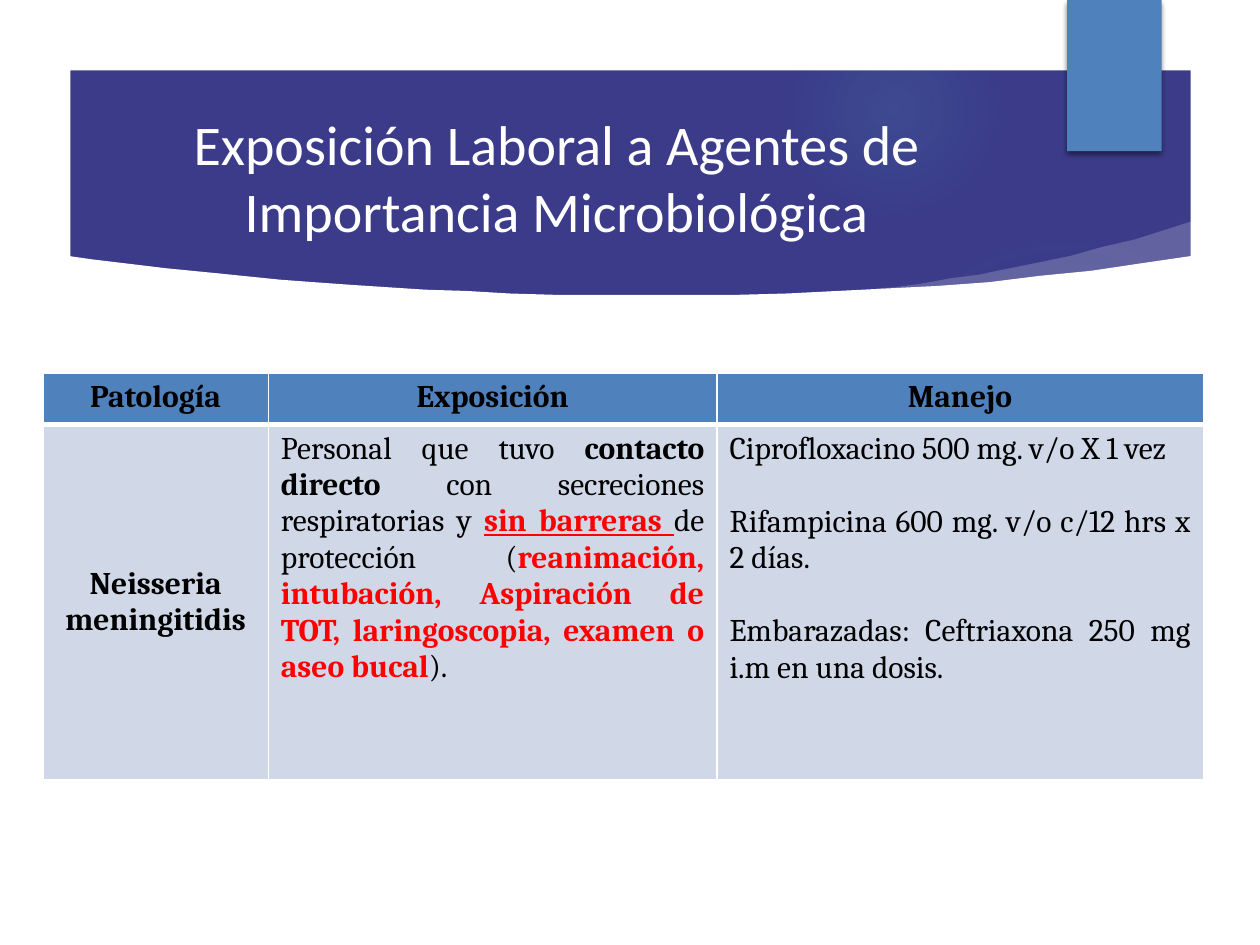
from lxml.etree import SubElement
from pptx import Presentation
from pptx.dml.color import RGBColor
from pptx.enum.shapes import MSO_SHAPE
from pptx.enum.text import MSO_ANCHOR, PP_ALIGN
from pptx.oxml import parse_xml
from pptx.oxml.ns import nsdecls, qn
from pptx.util import Inches, Pt

COLORS = {
    "banner": "3B3B89", "glow": "4BACC6", "blue": "4F81BD", "row": "D0D8E8",
    "white": "FFFFFF", "black": "000000", "red": "FF0000",
}
RGB = {name: RGBColor.from_string(value) for name, value in COLORS.items()}


def add_outline(page, contours, color):
    """Add a filled shape made of closed contours, given in inches."""
    builder = None
    for contour in contours:
        points = [(Inches(x), Inches(y)) for x, y in contour]
        if builder is None:
            builder = page.shapes.build_freeform(*points[0], scale=1.0)
        else:
            builder.move_to(*points[0])
        builder.add_line_segments(points[1:], close=True)
    shape = builder.convert_to_shape()
    shape.shadow.inherit = False
    shape.fill.solid()
    shape.fill.fore_color.rgb = RGB[color]
    shape.line.fill.background()
    return shape


def set_borders(cell, bottom_width):
    """Draw white cell borders, 1 pt wide except at the bottom."""
    properties = cell._tc.get_or_add_tcPr()
    widths = {"lnL": 1, "lnR": 1, "lnT": 1, "lnB": bottom_width}
    for position, (tag, width) in enumerate(widths.items()):
        properties.insert(position, parse_xml(
            f'<a:{tag} {nsdecls("a")} w="{Pt(width)}"><a:solidFill>'
            f'<a:srgbClr val="{COLORS["white"]}"/></a:solidFill></a:{tag}>'))


deck = Presentation()
deck.slide_width, deck.slide_height = Inches(10), Inches(7.5)
page = deck.slides.add_slide(deck.slide_layouts[6])
page.background.fill.solid()
page.background.fill.fore_color.rgb = RGB["banner"]

# Soft glows: left, top, diameter, (position, opacity) stops in percent
glows = [
    (6.89, 1.83, 3.08, [(0, 7), (36, 6), (69, 0)]),
    (6.22, 0, 1.75, [(0, 14), (36, 7), (73, 0)]),
]
for left, top, size, stops in glows:
    glow = page.shapes.add_shape(MSO_SHAPE.OVAL, Inches(left), Inches(top),
                                 Inches(size), Inches(size))
    glow.shadow.inherit = False
    glow.line.fill.background()
    stop_xml = "".join(
        f'<a:gs pos="{position * 1000}"><a:srgbClr val="{COLORS["glow"]}">'
        f'<a:alpha val="{opacity * 1000}"/></a:srgbClr></a:gs>'
        for position, opacity in stops)
    glow._element.spPr.insert(2, parse_xml(
        f'<a:gradFill {nsdecls("a")}><a:gsLst>{stop_xml}</a:gsLst>'
        '<a:path path="circle"><a:fillToRect l="50000" t="50000" r="50000" b="50000"/>'
        '</a:path></a:gradFill>'))

swoosh = add_outline(page, [[
    (6.99, 2.34), (7.5, 2.33), (8.2, 2.27), (8.9, 2.18), (9.56, 2.08), (9.51, 1.74),
    (9.26, 1.82), (9.01, 1.9), (8.75, 1.96), (8.5, 2.03), (8.26, 2.08), (8.01, 2.13),
    (7.77, 2.18), (7.54, 2.21), (7.32, 2.25), (7.1, 2.28), (6.96, 2.29),
]], "white")
swoosh_color = swoosh._element.spPr.find(qn("a:solidFill"))[0]
SubElement(swoosh_color, qn("a:alpha"), val="20000")

# White areas leave the banner with its curved lower edge
add_outline(page, [[
    (0.53, 2.03), (0.53, 6.99), (9.47, 6.99), (9.47, 2.03), (9.06, 2.09), (8.66, 2.15),
    (8.25, 2.19), (7.85, 2.24), (7.44, 2.27), (7.04, 2.29), (6.64, 2.31), (6.25, 2.33),
    (5.87, 2.34), (5.48, 2.34), (4.74, 2.34), (4.39, 2.34), (4.04, 2.33), (3.71, 2.31),
    (3.38, 2.3), (3.07, 2.28), (2.77, 2.26), (2.49, 2.24), (2.22, 2.22), (1.73, 2.17),
    (1.32, 2.13), (0.99, 2.09), (0.74, 2.06),
]], "white")
add_outline(page, [
    [(0, 0), (0, 7.5), (10, 7.5), (10, 0)],
    [(9.45, 6.95), (0.56, 6.95), (0.56, 0.56), (9.45, 0.56)],
], "white")

ribbon = page.shapes.add_shape(MSO_SHAPE.RECTANGLE, Inches(8.47), 0, Inches(0.75), Inches(1.2))
ribbon.fill.solid()
ribbon.fill.fore_color.rgb = RGB["blue"]
ribbon.line.fill.background()
ribbon._element.spPr.append(parse_xml(
    f'<a:effectLst {nsdecls("a")}><a:outerShdw blurRad="{Pt(3)}" dist="{Pt(2)}" dir="5400000" '
    f'rotWithShape="0"><a:srgbClr val="{COLORS["black"]}"><a:alpha val="45000"/></a:srgbClr>'
    '</a:outerShdw></a:effectLst>'))

title = page.shapes.add_textbox(Inches(0.95), Inches(1.01), Inches(6.94), Inches(0.78))
title.text_frame.word_wrap = True
title.text_frame.vertical_anchor = MSO_ANCHOR.MIDDLE
title.text_frame.text = "Exposición Laboral a Agentes de Importancia Microbiológica"
para = title.text_frame.paragraphs[0]
para.alignment = PP_ALIGN.CENTER
para.font.size, para.font.name = Pt(32), "Calibri"
para.font.color.rgb = RGB["white"]

# Each cell is a list of paragraphs, each paragraph a list of (text, style) spans
rows = [
    [[[("Patología", "bold")]], [[("Exposición", "bold")]], [[("Manejo", "bold")]]],
    [
        [[("Neisseria meningitidis", "bold")]],
        [[
            ("Personal que tuvo ", "plain"), ("contacto directo ", "bold"),
            ("con secreciones respiratorias y ", "plain"), ("sin barreras ", "underlined"),
            ("de protección (", "plain"),
            ("reanimación, intubación, Aspiración de TOT, laringoscopia, examen o aseo bucal",
             "warning"),
            (").", "plain"),
        ]],
        [
            [("Ciprofloxacino 500 mg. v/o X 1 vez", "plain")],
            [("Rifampicina 600 mg. v/o c/12 hrs x 2 días.", "plain")],
            [("Embarazadas: Ceftriaxona 250 mg i.m en una dosis.", "plain")],
        ],
    ],
]
table = page.shapes.add_table(2, 3, Inches(0.34), Inches(2.96), Inches(9.21), Inches(3.23)).table
table.horz_banding = False
for column, width in zip(table.columns, (1.79, 3.56, 3.86)):
    column.width = Inches(width)
for row, height in zip(table.rows, (0.41, 2.82)):
    row.height = Inches(height)

for row_index, row in enumerate(rows):
    for column_index, paragraphs in enumerate(row):
        cell = table.cell(row_index, column_index)
        is_header = row_index == 0
        is_centred = is_header or column_index == 0
        cell.fill.solid()
        cell.fill.fore_color.rgb = RGB["blue" if is_header else "row"]
        set_borders(cell, 3 if is_header else 1)
        if is_centred and not is_header:
            cell.vertical_anchor = MSO_ANCHOR.MIDDLE
        for index, spans in enumerate(paragraphs):
            para = cell.text_frame.paragraphs[0] if index == 0 else cell.text_frame.add_paragraph()
            para.alignment = PP_ALIGN.CENTER if is_centred else PP_ALIGN.JUSTIFY
            if index:
                para.space_before = Pt(21)
            for text, style in spans:
                span = para.add_run()
                span.text = text
                span.font.size, span.font.name = Pt(18), "Cambria"
                span.font.bold = style != "plain"
                span.font.underline = style == "underlined"
                span.font.color.rgb = RGB["red" if style in ("underlined", "warning") else "black"]

deck.save("out.pptx")
